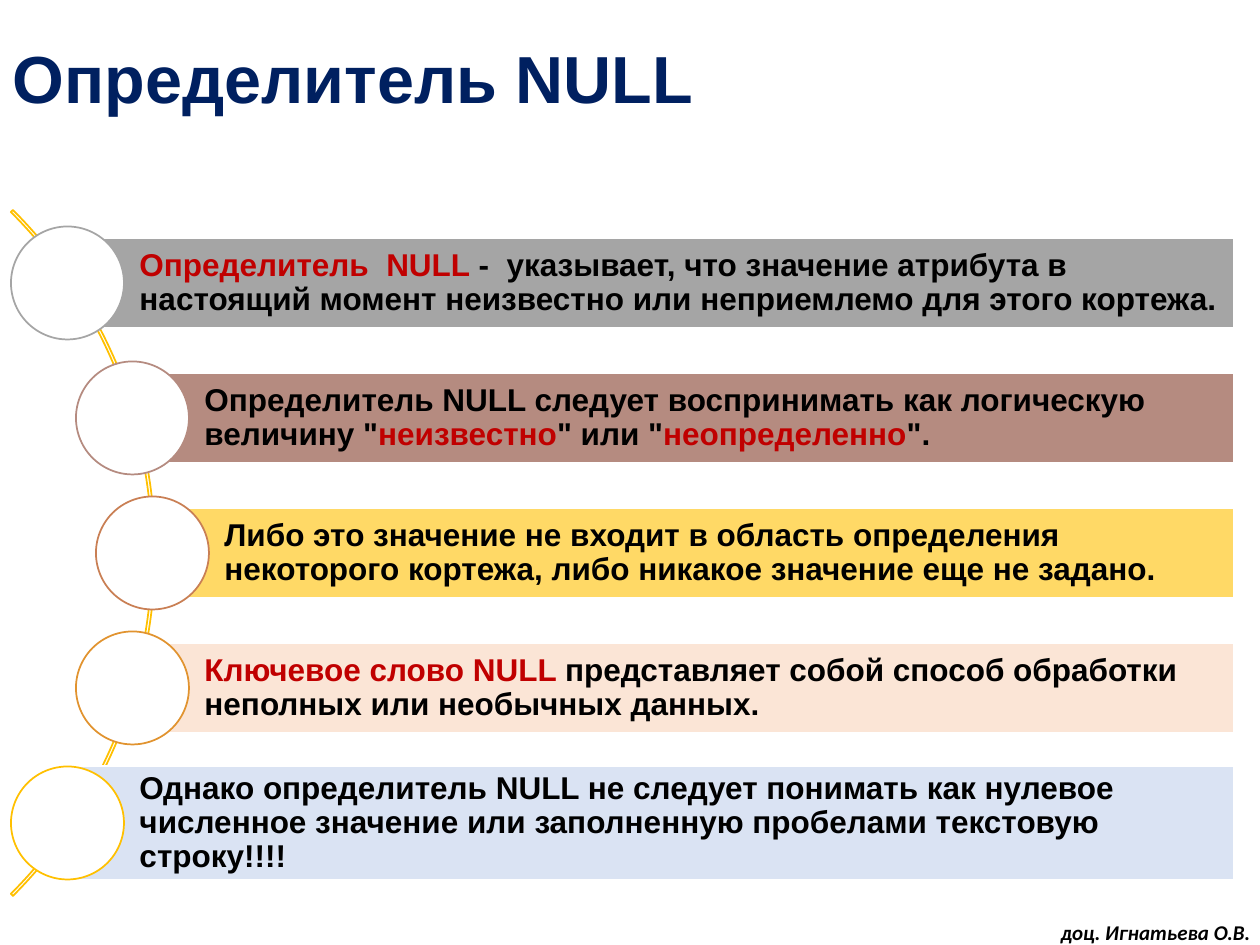
from pptx import Presentation
from pptx import util as u
from pptx.dml.color import RGBColor
from pptx.enum import shapes, text

PX = 914400 / 126
COLOURS = {
    "navy": "002060", "black": "000000", "red": "C00000", "white": "FFFFFF",
    "gold": "FFC000", "grey": "A5A5A5", "rose": "B58B80", "copper": "C97F54",
    "orange": "E1932F", "yellow": "FFD966", "peach": "FBE5D6", "ice": "DAE3F3",
}
SHAPE = shapes.MSO_SHAPE


def px(length):
    return u.Emu(round(length * PX))


def colour(name):
    return RGBColor.from_string(COLOURS[name])


def write(shape, spans, size, font="Arial", italic=False, spacing=0.9,
          anchor=text.MSO_ANCHOR.MIDDLE, insets=(13, 6, 13, 6)):
    frame = shape.text_frame
    frame.word_wrap = True
    frame.vertical_anchor = anchor
    (frame.margin_left, frame.margin_top,
     frame.margin_right, frame.margin_bottom) = map(px, insets)
    para = frame.paragraphs[0]
    para.alignment = text.PP_ALIGN.LEFT
    para.line_spacing = spacing
    for words, name in spans:
        span = para.add_run()
        span.text = words
        span.font.name = font
        span.font.size = u.Pt(size)
        span.font.bold = True
        span.font.italic = italic
        span.font.color.rgb = colour(name)


class SlideBuilder:
    def __init__(self, slide):
        self.page = slide

    def textbox(self, left, top, width, height, spans, **style):
        box = self.page.shapes.add_textbox(*map(px, (left, top, width, height)))
        write(box, spans, **style)

    def shape(self, kind, left, top, width, height, line, fill=None):
        shape = self.page.shapes.add_shape(kind, *map(px, (left, top, width, height)))
        shape.shadow.inherit = False
        shape.line.color.rgb = colour(line)
        shape.line.width = u.Pt(1)
        if fill:
            shape.fill.solid()
            shape.fill.fore_color.rgb = colour(fill)
        else:
            shape.fill.background()
        return shape

    def arc(self, left, top, size, line):
        arc = self.shape(SHAPE.BLOCK_ARC, left, top, size, size, line)
        for index, value in enumerate((189, 27, 0.003)):
            arc.adjustments[index] = value

    def bar(self, left, middle, right, height, fill, spans):
        bar = self.shape(SHAPE.RECTANGLE, left, middle - height / 2,
                         right - left, height, "white", fill)
        write(bar, spans, size=18, insets=(72, 6, 6, 6))

    def circle(self, left, middle, size, line):
        self.shape(SHAPE.OVAL, left, middle - size / 2, size, size, line, "white")


ROWS = [
    (11, 90, "grey", "grey", [
        ("Определитель  NULL ", "red"),
        ("-  указывает, что значение атрибута в настоящий момент неизвестно "
         "или неприемлемо для этого кортежа.", "black")]),
    (76, 90, "rose", "rose", [
        ("Определитель NULL следует воспринимать как логическую величину \"", "black"),
        ("неизвестно", "red"), ("\" или \"", "black"),
        ("неопределенно", "red"), ("\".", "black")]),
    (96, 90, "yellow", "copper", [
        ("Либо это значение не входит в область определения некоторого кортежа, "
         "либо никакое значение еще не задано.", "black")]),
    (76, 90, "peach", "orange", [
        ("Ключевое слово NULL ", "red"),
        ("представляет собой способ обработки неполных или необычных данных.", "black")]),
    (11, 114, "ice", "gold", [
        ("Однако определитель NULL не следует понимать как нулевое численное "
         "значение или заполненную пробелами текстовую строку!!!!", "black")]),
]
FIRST_MIDDLE, ROW_STEP, CIRCLE, BAR_RIGHT = 283, 135, 113, 1234


def main():
    deck = Presentation()
    deck.slide_width, deck.slide_height = u.Inches(10), u.Inches(7.5)
    builder = SlideBuilder(deck.slides.add_slide(deck.slide_layouts[6]))
    builder.textbox(0, 14, 1260, 135, [("Определитель NULL", "navy")], size=38)
    builder.textbox(1048, 914, 218, 38, [("доц. Игнатьева О.В.", "black")],
                    size=12, font="Calibri", italic=True, spacing=1.0,
                    anchor=text.MSO_ANCHOR.TOP)
    builder.arc(-815, 68, 970, "gold")
    for index, (left, height, fill, outline, spans) in enumerate(ROWS):
        middle = FIRST_MIDDLE + index * ROW_STEP
        builder.bar(left + CIRCLE / 2, middle, BAR_RIGHT, height, fill, spans)
        builder.circle(left, middle, CIRCLE, outline)
    deck.save("out.pptx")


if __name__ == "__main__":
    main()
